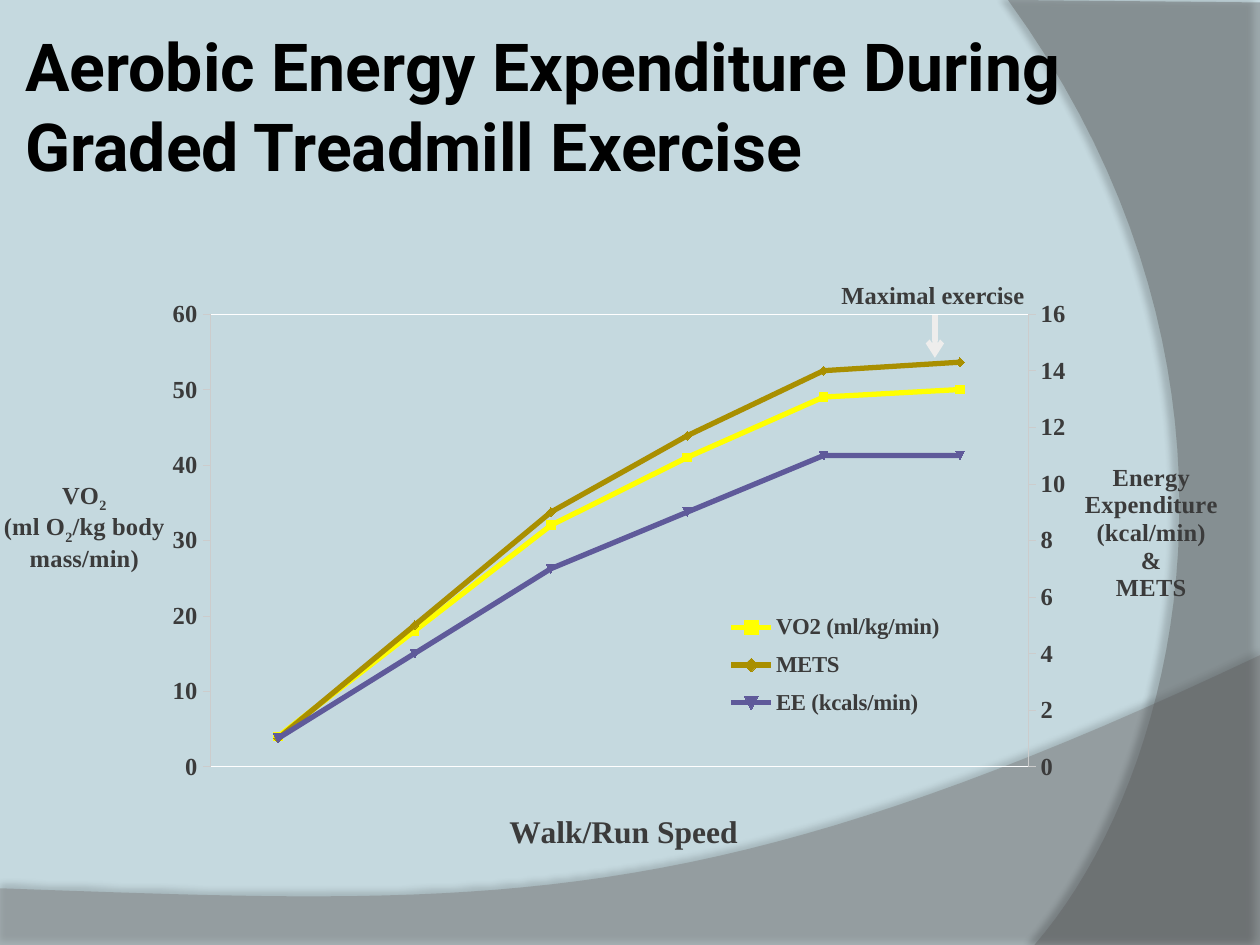
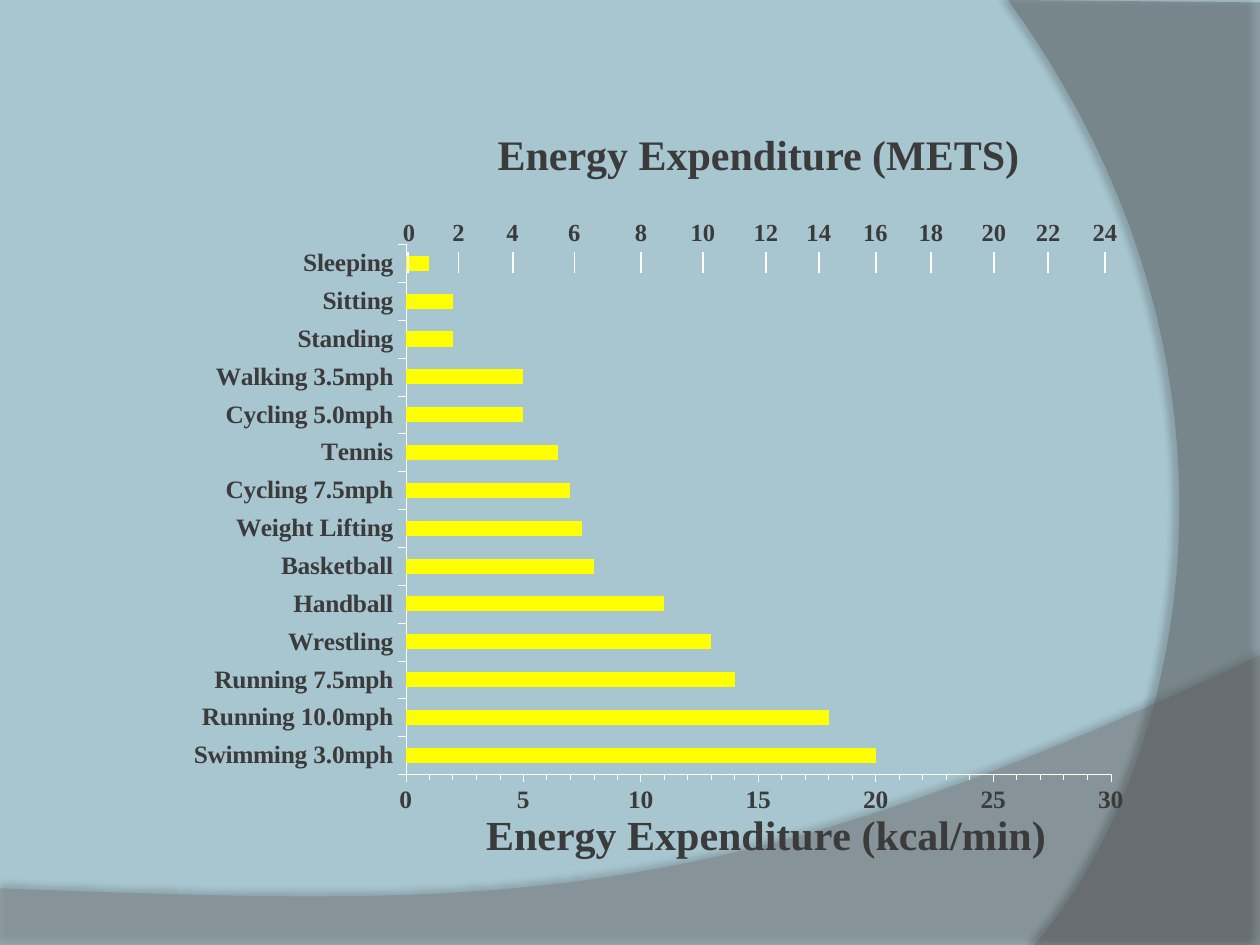
from copy import deepcopy
from dataclasses import dataclass

from lxml import etree
from pptx import Presentation
from pptx.chart.axis import ValueAxis
from pptx.chart.data import CategoryChartData
from pptx.dml.color import RGBColor
from pptx.enum.chart import (XL_CHART_TYPE, XL_LEGEND_POSITION, XL_MARKER_STYLE,
                             XL_TICK_LABEL_POSITION, XL_TICK_MARK)
from pptx.enum.shapes import MSO_CONNECTOR
from pptx.enum.text import MSO_ANCHOR, MSO_AUTO_SIZE, PP_ALIGN
from pptx.oxml.ns import qn
from pptx.util import Inches, Pt

LINE_CHART, BAR_CHART = XL_CHART_TYPE.LINE_MARKERS, XL_CHART_TYPE.BAR_CLUSTERED
LEGEND_RIGHT = XL_LEGEND_POSITION.RIGHT
AUTO_MARKER = XL_MARKER_STYLE.AUTOMATIC
LABELS_LOW = XL_TICK_LABEL_POSITION.LOW
TICK_OUT, TICK_NONE = XL_TICK_MARK.OUTSIDE, XL_TICK_MARK.NONE
STRAIGHT = MSO_CONNECTOR.STRAIGHT
MIDDLE = MSO_ANCHOR.MIDDLE
NO_AUTOFIT = MSO_AUTO_SIZE.NONE
LEFT, CENTER = PP_ALIGN.LEFT, PP_ALIGN.CENTER
TITLE_ONLY, BLANK = 5, 6


@dataclass(frozen=True)
class Theme:
    pale: str = "C5D9DF"
    mid: str = "A8C6D0"
    ink: str = "3B3B3B"
    title: str = "000000"
    white: str = "FFFFFF"
    arrow: str = "EEEDEC"
    axis: str = "CCCCCC"
    yellow: str = "FFFF00"
    olive: str = "A98F00"
    violet: str = "5F5A9A"
    title_font: str = "Roboto"
    body_font: str = "Times New Roman"
    title_size: float = 37.8
    heading: float = 24
    subheading: float = 18
    label: float = 14
    bar_label: float = 14.5
    legend: float = 13


THEME = Theme()

# outline start, straight points, then the curve's two controls and end
BANDS = [
    {"start": (0, 7.05), "corners": [(0, 7.51), (10, 7.51), (10, 5.2)],
     "curve": [(5.59, 7.29), (3.91, 7.19), (0, 7.05)],
     "color": "7F7F7F", "opacity": 45, "shadow": (35, 4, 3.5, 270)},
    {"start": (10, 0.02), "corners": [(10, 7.5), (8.21, 7.5)],
     "curve": [(9.35, 6.19), (10.18, 3), (8, 0)],
     "color": "5E5E5E", "opacity": 40, "shadow": (45, 4, 4, 180)},
]

TREADMILL = [
    ("VO2 (ml/kg/min)", (4, 18, 32, 41, 49, 50), THEME.yellow),
    ("METS", (1, 5, 9, 11.7, 14, 14.3), THEME.olive),
    ("EE (kcals/min)", (1, 4, 7, 9, 11, 11), THEME.violet),
]

ACTIVITIES = {
    "Swimming 3.0mph": 20, "Running 10.0mph": 18, "Running 7.5mph": 14,
    "Wrestling": 13, "Handball": 11, "Basketball": 8, "Weight Lifting": 7.5,
    "Cycling 7.5mph": 7, "Tennis": 6.5, "Cycling 5.0mph": 5,
    "Walking 3.5mph": 5, "Standing": 2, "Sitting": 2, "Sleeping": 1,
}

METS_TICKS = [3.24, 3.64, 4.07, 4.56, 5.09, 5.58, 6.08, 6.5, 6.95, 7.39, 7.89, 8.32, 8.77]


def rgb(color):
    return RGBColor.from_string(color)


def apply(target, formats):
    for name, value in formats.items():
        setattr(target, name, value)


def set_font(font, size, color=THEME.ink, name=THEME.body_font):
    apply(font, {"size": Pt(size), "bold": True, "name": name})
    font.color.rgb = rgb(color)


def set_line(line, color, width):
    line.color.rgb = rgb(color)
    line.width = Pt(width)


def add_child(parent, tag, **attributes):
    return etree.SubElement(parent, qn(tag), {k: str(v) for k, v in attributes.items()})


def curve_points(p0, p1, p2, p3, steps=40):
    for i in range(1, steps + 1):
        t = i / steps
        u = 1 - t
        yield tuple(u**3 * a + 3 * u * u * t * b + 3 * u * t * t * c + t**3 * d
                    for a, b, c, d in zip(p0, p1, p2, p3))


def add_band(slide, band):
    corners = band["corners"]
    points = corners + list(curve_points(corners[-1], *band["curve"]))
    builder = slide.shapes.build_freeform(*map(Inches, band["start"]))
    builder.add_line_segments([(Inches(x), Inches(y)) for x, y in points], close=True)
    shape = builder.convert_to_shape()
    shape.fill.solid()
    shape.fill.fore_color.rgb = rgb(band["color"])
    fill_color = shape.element.spPr.find(qn("a:solidFill"))[0]
    add_child(fill_color, "a:alpha", val=band["opacity"] * 1000)
    shape.line.fill.background()
    shape.shadow.inherit = False
    opacity, blur, distance, angle = band["shadow"]
    shadow = add_child(shape.element.spPr.find(qn("a:effectLst")), "a:outerShdw",
                       blurRad=Pt(blur), dist=Pt(distance), dir=angle * 60000,
                       algn="ctr", rotWithShape=0)
    add_child(add_child(shadow, "a:srgbClr", val="000000"), "a:alpha", val=opacity * 1000)


def new_slide(prs, layout, background):
    slide = prs.slides.add_slide(prs.slide_layouts[layout])
    slide.background.fill.solid()
    slide.background.fill.fore_color.rgb = rgb(background)
    for band in BANDS:
        add_band(slide, band)
    return slide


def add_title(slide, text, box):
    title = slide.shapes.title
    apply(title, dict(zip(("left", "top", "width", "height"), map(Inches, box))))
    frame = title.text_frame
    frame.text = text
    apply(frame, {"word_wrap": True, "auto_size": NO_AUTOFIT, "vertical_anchor": MIDDLE})
    apply(frame, {f"margin_{side}": Inches(0.05) for side in ("left", "top", "right", "bottom")})
    frame.paragraphs[0].alignment = LEFT
    set_font(frame.paragraphs[0].runs[0].font, THEME.title_size, THEME.title, THEME.title_font)
    title.element.getparent().append(title.element)


def add_label(slide, text, box, size, wrap=True, align=LEFT):
    frame = slide.shapes.add_textbox(*map(Inches, box)).text_frame
    frame.word_wrap = wrap
    paragraph = frame.paragraphs[0]
    paragraph.alignment = align
    run = paragraph.add_run()
    run.text = text
    set_font(run.font, size)
    return paragraph


def add_rule(slide, start, end, color, width, arrow=False):
    rule = slide.shapes.add_connector(STRAIGHT, *map(Inches, start + end))
    set_line(rule.line, color, width)
    if arrow:
        add_child(rule.line._get_or_add_ln(), "a:tailEnd", type="arrow")
    add_child(rule.element.spPr, "a:effectLst")


def place(part, x, y, w=None, h=None, inner=False):
    """Give a chart part a manual layout in fractions of the chart."""
    for old in part.findall(qn("c:layout")):
        part.remove(old)
    layout = etree.Element(qn("c:layout"))
    manual = add_child(layout, "c:manualLayout")
    if inner:
        add_child(manual, "c:layoutTarget", val="inner")
    for tag in ("c:xMode", "c:yMode"):
        add_child(manual, tag, val="edge")
    for tag, value in zip("xywh", (x, y, w, h)):
        if value is not None:
            add_child(manual, f"c:{tag}", val=value)
    before = part.xpath("c:tx | c:legendPos")
    part.insert(part.index(before[-1]) + 1 if before else 0, layout)


def set_axis_title(axis, lines, size, x, y):
    """Each line is a list of runs; a run that is just "2" is a subscript."""
    frame = axis.axis_title.text_frame
    for i, line in enumerate(lines):
        paragraph = frame.add_paragraph() if i else frame.paragraphs[0]
        for text in line:
            run = paragraph.add_run()
            run.text = text
            set_font(run.font, size)
            if text == "2":
                run._r.get_or_add_rPr().set("baseline", "-25000")
    frame._txBody.find(qn("a:bodyPr")).set("rot", "0")
    place(axis.axis_title._element, x, y)


def format_axis(axis, size, color, width, **formats):
    apply(axis, {"has_major_gridlines": False, "major_tick_mark": TICK_OUT,
                 "minor_tick_mark": TICK_NONE, **formats})
    set_font(axis.tick_labels.font, size)
    set_line(axis.format.line, color, width)


def add_chart(slide, kind, box, categories, series):
    data = CategoryChartData()
    data.categories = categories
    for name, values, _ in series:
        data.add_series(name, values)
    chart = slide.shapes.add_chart(kind, *map(Inches, box), data).chart
    apply(chart, {"has_title": False, "has_legend": False})
    set_font(chart.font, THEME.label)
    chart.plots[0].vary_by_categories = False
    return chart


def split_to_right_axis(chart, first):
    """Move the series from index first on to a second value axis, and return it."""
    area = chart.plots[0]._element.getparent()
    left_plot = area.find(qn("c:lineChart"))
    right_plot = deepcopy(left_plot)
    for plot, unwanted in ((left_plot, slice(first, None)), (right_plot, slice(first))):
        for series in plot.findall(qn("c:ser"))[unwanted]:
            plot.remove(series)
    left_plot.addnext(right_plot)
    category, value = area.find(qn("c:catAx")), area.find(qn("c:valAx"))
    right_category, right_value = deepcopy(category), deepcopy(value)
    value.addnext(right_value)
    right_value.addnext(right_category)
    new_ids = {axis.find(qn("c:axId")).get("val"): number
               for axis, number in ((category, "50010"), (value, "50020"))}
    for part in (right_plot, right_category, right_value):
        for reference in part.xpath("c:axId | c:crossAx"):
            reference.set("val", new_ids[reference.get("val")])
    right_value.find(qn("c:crosses")).set("val", "max")
    right_value.find(qn("c:axPos")).set("val", "r")
    return ValueAxis(right_value)


def add_treadmill_chart(slide, box):
    chart = add_chart(slide, LINE_CHART, box, [str(n) for n in range(1, 7)], TREADMILL)
    for series, (_, _, color) in zip(chart.plots[0].series, TREADMILL):
        series.smooth = False
        set_line(series.format.line, color, 3)
        apply(series.marker, {"style": AUTO_MARKER, "size": 5})
        series.marker.format.fill.solid()
        series.marker.format.fill.fore_color.rgb = rgb(color)
        set_line(series.marker.format.line, color, 0.75)
    speed, oxygen = chart.category_axis, chart.value_axis
    speed.visible = False
    energy = split_to_right_axis(chart, 1)
    for axis, top, step in ((oxygen, 60, 10), (energy, 16, 2)):
        format_axis(axis, THEME.label, THEME.axis, 0.25,
                    minimum_scale=0, maximum_scale=top, major_unit=step)
    set_axis_title(speed, [["Walk/Run Speed"]], THEME.subheading, 0.41, 0.87)
    set_axis_title(oxygen, [["VO", "2"], ["(ml O", "2", "/kg body mass/min)"]],
                   THEME.label, 0, 0.32)
    set_axis_title(energy, [["Energy"], ["Expenditure"], ["(kcal/min)"], ["&"], ["METS"]],
                   THEME.label, 0.88, 0.29)
    chart.has_legend = True
    apply(chart.legend, {"position": LEGEND_RIGHT, "include_in_layout": False})
    set_font(chart.legend.font, THEME.legend)
    place(chart.legend._element, 0.59, 0.53, 0.18, 0.21)
    area = chart.plots[0]._element.getparent()
    place(area, 0.171, 0.051, 0.666, 0.753, inner=True)
    border = add_child(add_child(area, "c:spPr"), "a:ln", w=Pt(0.5))
    add_child(add_child(border, "a:solidFill"), "a:srgbClr", val=THEME.white)


def add_activity_chart(slide, box):
    chart = add_chart(slide, BAR_CHART, box, list(ACTIVITIES),
                      [("Series 1", ACTIVITIES.values(), THEME.yellow)])
    plot = chart.plots[0]
    plot.gap_width = 150
    bars = plot.series[0].format.fill
    bars.solid()
    bars.fore_color.rgb = rgb(THEME.yellow)
    format_axis(chart.category_axis, THEME.bar_label, THEME.white, 0.2,
                tick_label_position=LABELS_LOW)
    format_axis(chart.value_axis, THEME.bar_label, THEME.white, 0.2, minimum_scale=0,
                maximum_scale=30, major_unit=5, minor_tick_mark=TICK_OUT)
    chart.value_axis._element.get_or_add_minorUnit().set("val", "1")
    set_axis_title(chart.value_axis, [["Energy Expenditure (kcal/min)"]],
                   THEME.heading, 0.33, 0.905)
    place(plot._element.getparent(), 0.261, 0.016, 0.667, 0.847, inner=True)


def add_mets_scale(slide, left, top, width):
    numbers = "\t".join(str(2 * i) for i in range(len(METS_TICKS)))
    paragraph = add_label(slide, numbers, (left, top, width, 0.34), THEME.label)
    stops = add_child(paragraph._p.get_or_add_pPr(), "a:tabLst")
    for x in METS_TICKS[1:]:
        add_child(stops, "a:tab", pos=Inches(x - left - 0.1), algn="ctr")
    for x in METS_TICKS:
        add_rule(slide, (x, top + 0.5), (x, top + 0.33), THEME.white, 1)


def treadmill_slide(prs):
    slide = new_slide(prs, TITLE_ONLY, THEME.pale)
    add_treadmill_chart(slide, (0, 2.25, 9.75, 4.77))
    add_title(slide, "Aerobic Energy Expenditure During Graded Treadmill Exercise",
              (0.15, 0.17, 10, 1.33))
    add_rule(slide, (7.42, 2.5), (7.42, 2.84), THEME.arrow, 3, arrow=True)
    add_label(slide, "Maximal exercise", (6.58, 2.17, 1.67, 0.34), THEME.label, wrap=False)


def activity_slide(prs):
    slide = new_slide(prs, BLANK, THEME.mid)
    add_activity_chart(slide, (1.03, 1.86, 8.39, 5.06))
    add_mets_scale(slide, 3.1, 1.67, 6)
    add_label(slide, "Energy Expenditure (METS)", (3.73, 0.97, 4.58, 0.5),
              THEME.heading, align=CENTER)


def main():
    prs = Presentation()
    prs.slide_width, prs.slide_height = Inches(10), Inches(7.5)
    treadmill_slide(prs)
    activity_slide(prs)
    prs.save("out.pptx")


if __name__ == "__main__":
    main()
